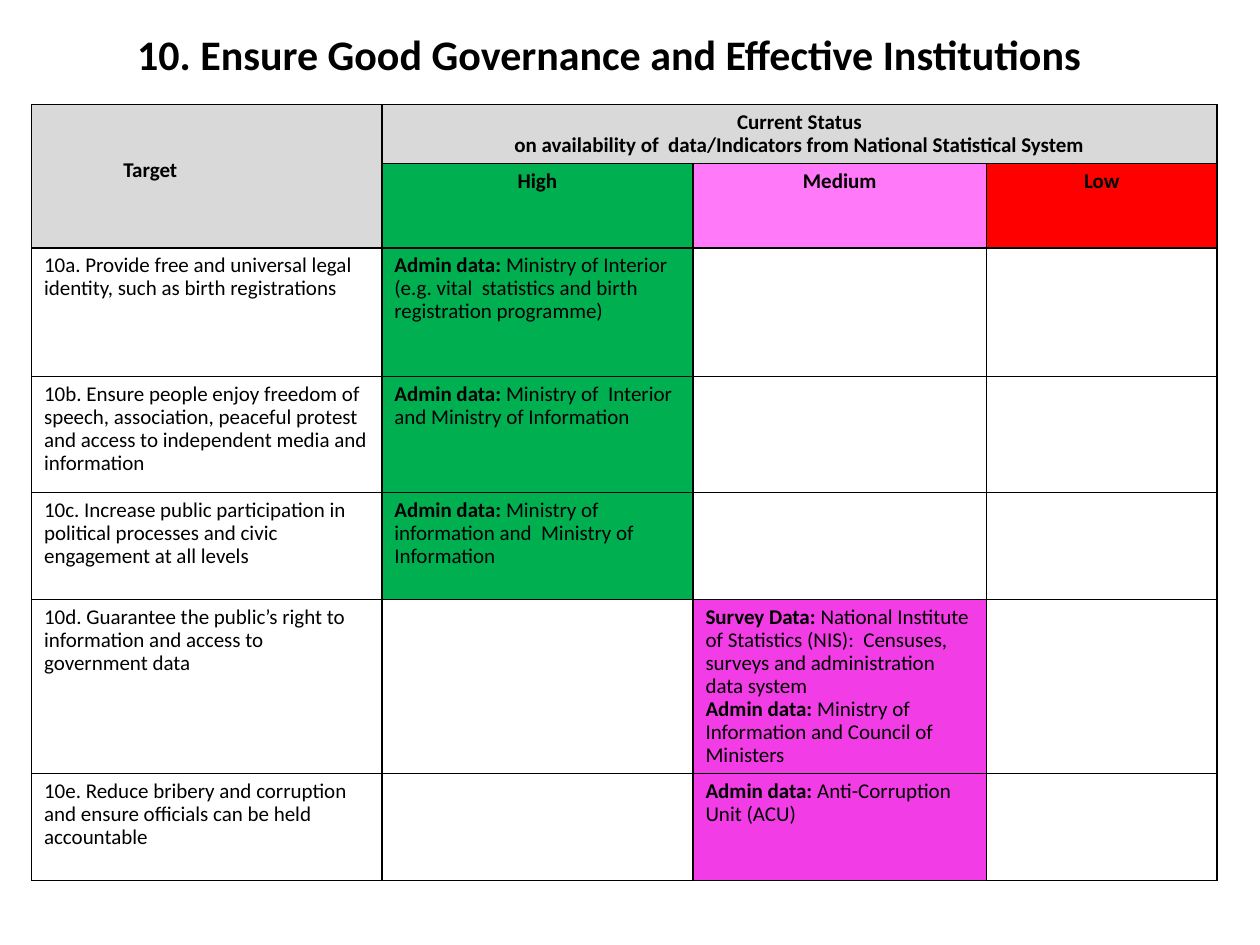
"""Build a slide with a table of governance targets and data availability."""
from lxml import etree
from pptx import Presentation
from pptx import util as u
from pptx.dml.color import RGBColor
from pptx.enum import text
from pptx.oxml import ns

GREY, GREEN, WHITE = "D9D9D9", "00B050", "FFFFFF"
PINK, MAGENTA, RED = "FF79F9", "F23CE5", "FF0000"
COLUMNS = [2.78, 2.47, 2.33, 1.83]
ROWS = [0.47, 0.67, 1.02, 0.92, 0.85, 1.38, 0.85]
ADMIN = "Admin data:"
LEVELS = [("High", GREEN), ("Medium", PINK), ("Low", RED)]
TARGETS = [
    ("10a. Provide free and universal legal identity, such as birth registrations", 1,
     [(ADMIN, " Ministry of Interior (e.g. vital  statistics and birth registration programme)")]),
    ("10b. Ensure people enjoy freedom of speech, association, peaceful protest "
     "and access to independent media and information", 1,
     [(ADMIN, " Ministry of  Interior and Ministry of Information")]),
    ("10c. Increase public participation in political processes and civic "
     "engagement at all levels", 1,
     [(ADMIN, " Ministry of information and  Ministry of Information")]),
    ("10d. Guarantee the public’s right to information and access to government data", 2,
     [("Survey Data:", " National Institute of Statistics (NIS):  Censuses, surveys "
       "and administration data system"),
      (ADMIN, " Ministry of  Information and Council of Ministers")]),
    ("10e. Reduce bribery and corruption and ensure officials can be held accountable", 2,
     [(ADMIN, " Anti-Corruption Unit (ACU)")]),
]
STATUS_FILLS = {1: GREEN, 2: MAGENTA}


def color(value):
    """Turn a hex string into a colour."""
    return RGBColor.from_string(value)


def write(frame, lines, size=12, centered=False, font="Calibri", ink="000000"):
    """Write lines, each a pair of bold and regular text, into a text frame."""
    for index, line in enumerate(lines):
        paragraph = frame.add_paragraph() if index else frame.paragraphs[0]
        paragraph.line_spacing = 0.9
        paragraph.space_before = u.Pt(0)
        paragraph.alignment = text.PP_ALIGN.CENTER if centered else text.PP_ALIGN.LEFT
        for content, bold in zip(line, (True, False)):
            if content:
                run = paragraph.add_run()
                run.text = content
                run.font.name, run.font.size, run.font.bold = font, u.Pt(size), bold
                run.font.color.rgb = color(ink)


class SlideBuilder:
    """Hold the style and the current slide."""

    border, border_width = "000000", u.Pt(1)

    def __init__(self, presentation):
        """Add a title-only slide."""
        self.slide = presentation.slides.add_slide(presentation.slide_layouts[5])

    def title(self, content, left, top, width, height):
        """Place and fill the title."""
        shape = self.slide.shapes.title
        shape.left, shape.top = u.Inches(left), u.Inches(top)
        shape.width, shape.height = u.Inches(width), u.Inches(height)
        shape.text_frame.vertical_anchor = text.MSO_ANCHOR.MIDDLE
        write(shape.text_frame, [(content, "")], size=24, centered=True)

    def table(self, left, top, columns, rows):
        """Add a plain bordered table."""
        table = self.slide.shapes.add_table(
            len(rows), len(columns), u.Inches(left), u.Inches(top),
            u.Inches(sum(columns)), u.Inches(sum(rows))).table
        table.first_row = table.horz_banding = False
        for column, width in zip(table.columns, columns):
            column.width = u.Inches(width)
        for row, height in zip(table.rows, rows):
            row.height = u.Inches(height)
        for cell in table.iter_cells():
            self.outline(cell)
            self.cell(cell, [], WHITE)
        return table

    def outline(self, cell):
        """Draw the four borders of a cell."""
        properties = cell._tc.get_or_add_tcPr()
        for side in ("a:lnL", "a:lnR", "a:lnT", "a:lnB"):
            line = etree.SubElement(properties, ns.qn(side), w=str(self.border_width))
            fill = etree.SubElement(line, ns.qn("a:solidFill"))
            etree.SubElement(fill, ns.qn("a:srgbClr"), val=self.border)

    def cell(self, cell, lines, fill, centered=False):
        """Fill a cell and write its lines."""
        cell.fill.solid()
        cell.fill.fore_color.rgb = color(fill)
        write(cell.text_frame, lines, centered=centered)


def main():
    """Build and save the presentation."""
    presentation = Presentation()
    presentation.slide_width, presentation.slide_height = u.Inches(10), u.Inches(7.5)
    builder = SlideBuilder(presentation)
    builder.title("10. Ensure Good Governance and Effective Institutions", 0.5, 0.08, 8.67, 0.75)
    table = builder.table(0.25, 0.83, COLUMNS, ROWS)

    target = table.cell(0, 0)
    target.merge(table.cell(1, 0))
    target.margin_left, target.margin_top = u.Inches(0.73), u.Inches(0.43)
    builder.cell(target, [("Target", "")], GREY)
    status = table.cell(0, 1)
    status.merge(table.cell(0, 3))
    builder.cell(status, [
        ("Current Status", ""),
        ("on availability of  data/Indicators from National Statistical System", ""),
    ], GREY, centered=True)
    for column, (level, fill) in enumerate(LEVELS, 1):
        builder.cell(table.cell(1, column), [(level, "")], fill, centered=True)
    for row, (goal, column, sources) in enumerate(TARGETS, 2):
        builder.cell(table.cell(row, 0), [("", goal)], WHITE)
        builder.cell(table.cell(row, column), sources, STATUS_FILLS[column])
    presentation.save("out.pptx")


if __name__ == "__main__":
    main()
